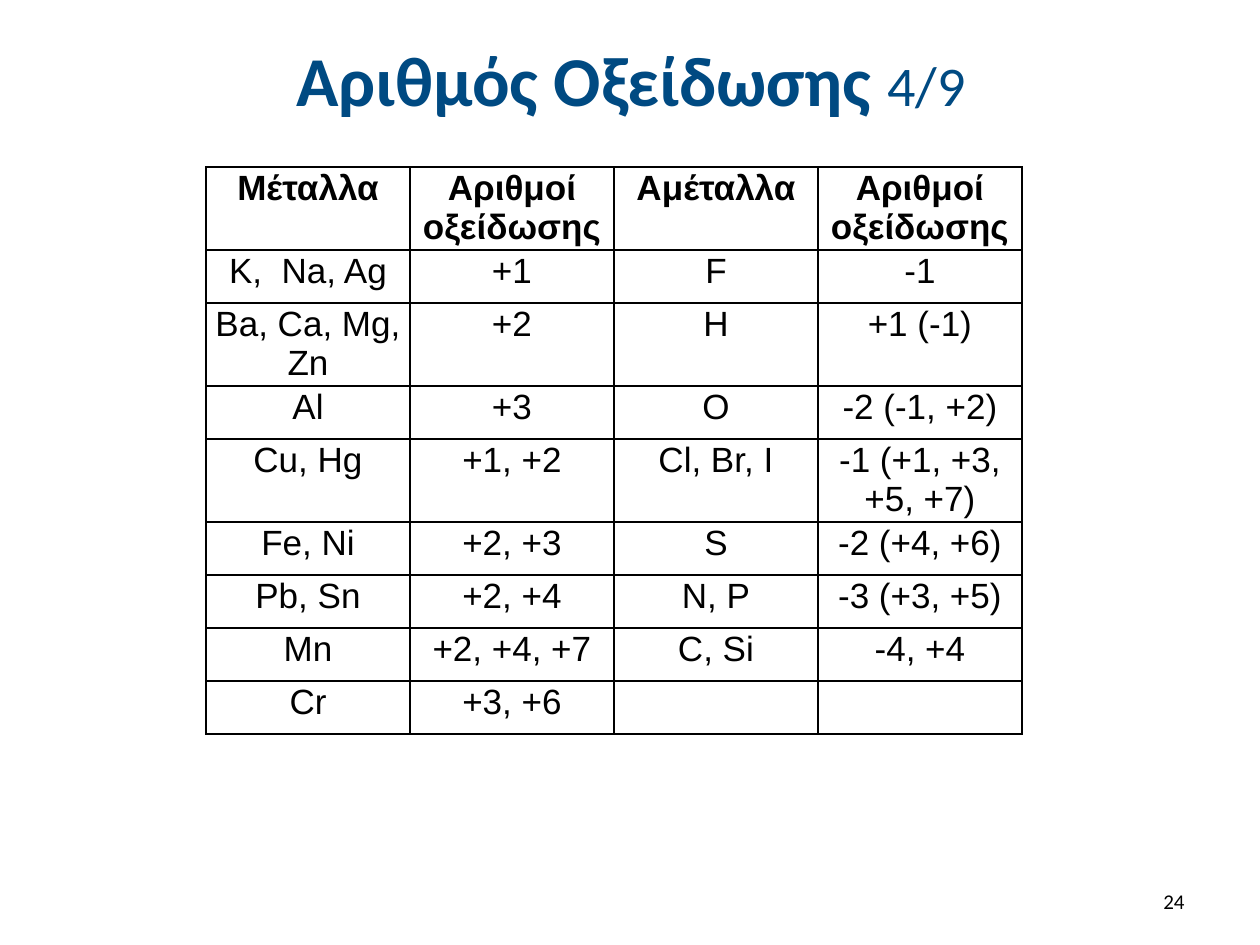
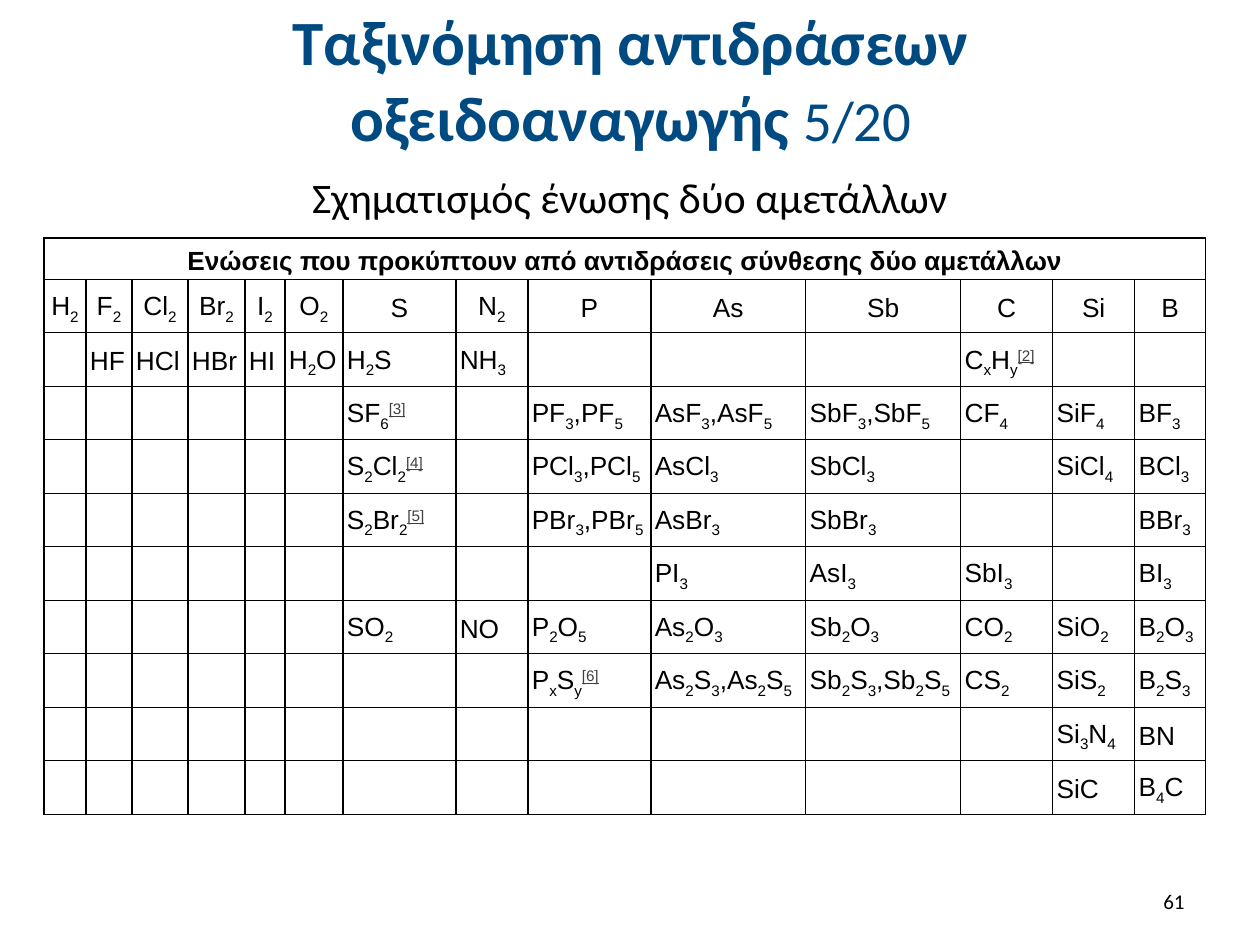
from dataclasses import dataclass
from itertools import groupby

from lxml import etree
from pptx import Presentation
from pptx.dml.color import RGBColor
from pptx.enum.text import MSO_ANCHOR, MSO_AUTO_SIZE, PP_ALIGN
from pptx.oxml.ns import qn
from pptx.util import Emu, Pt

LEFT, CENTER, RIGHT = PP_ALIGN.LEFT, PP_ALIGN.CENTER, PP_ALIGN.RIGHT
TOP, MIDDLE = MSO_ANCHOR.TOP, MSO_ANCHOR.MIDDLE
NO_AUTOFIT = MSO_AUTO_SIZE.NONE
TITLE_ONLY = 5
PX_PER_INCH = 126


@dataclass(frozen=True)
class Theme:
    title_color: str = "004A82"
    text_color: str = "000000"
    note_color: str = "3F3F3F"
    paper: str = "FFFFFF"
    text_font: str = "Calibri"
    table_font: str = "Arial"
    subtitle_size: float = 24
    number_size: float = 12
    numbers_table_size: float = 20
    compounds_table_size: float = 15
    border_width: float = 1
    subscript: int = -25000
    superscript: int = 30000


THEME = Theme()

# Metals and nonmetals with their oxidation numbers
OXIDATION_ROWS = [
    ["Μέταλλα", "Αριθμοί οξείδωσης", "Αμέταλλα", "Αριθμοί οξείδωσης"],
    ["K,  Na, Ag", "+1", "F", "-1"],
    ["Ba, Ca, Mg, Zn", "+2", "H", "+1 (-1)"],
    ["Al", "+3", "O", "-2 (-1, +2)"],
    ["Cu, Hg", "+1, +2", "Cl, Br, I", "-1 (+1, +3, +5, +7)"],
    ["Fe, Ni", "+2, +3", "S", "-2 (+4, +6)"],
    ["Pb, Sn", "+2, +4", "N, P", "-3 (+3, +5)"],
    ["Mn", "+2, +4, +7", "C, Si", "-4, +4"],
    ["Cr", "+3, +6", "", ""],
]
OXIDATION_COLUMNS = [204] * 4
OXIDATION_HEIGHTS = [83, 53, 83, 53, 83, 53, 53, 53, 53]

# Compounds of two nonmetals, one column per element
COMPOUNDS_HEADING = "Ενώσεις που προκύπτουν από αντιδράσεις σύνθεσης δύο αμετάλλων"
COMPOUND_ROWS = [row.split("|") for row in (
    "H2|F2|Cl2|Br2|I2|O2|S|N2|P|As|Sb|C|Si|B",
    "|HF|HCl|HBr|HI|H2O|H2S|NH3||||CxHy[2]||",
    "||||||SF6[3]||PF3,PF5|AsF3,AsF5|SbF3,SbF5|CF4|SiF4|BF3",
    "||||||S2Cl2[4]||PCl3,PCl5|AsCl3|SbCl3||SiCl4|BCl3",
    "||||||S2Br2[5]||PBr3,PBr5|AsBr3|SbBr3|||BBr3",
    "|||||||||PI3|AsI3|SbI3||BI3",
    "||||||SO2|NO|P2O5|As2O3|Sb2O3|CO2|SiO2|B2O3",
    "||||||||PxSy[6]|As2S3,As2S5|Sb2S3,Sb2S5|CS2|SiS2|B2S3",
    "||||||||||||Si3N4|BN",
    "||||||||||||SiC|B4C",
)]
COMPOUND_COLUMNS = [42, 46, 56, 57, 40, 58, 113, 72, 123, 155, 155, 92, 82, 71]
COMPOUND_HEIGHTS = [40] + [53, 54] * 5


def px(length):
    return Emu(round(length * 914400 / PX_PER_INCH))


def set_all(target, values):
    for name, value in values.items():
        setattr(target, name, value)


def add_span(para, text, size, font=THEME.text_font, color=THEME.text_color,
             baseline=0, **style):
    span = para.add_run()
    span.text = text
    set_all(span.font, {"size": Pt(size), "name": font, "bold": False, **style})
    span.font.color.rgb = RGBColor.from_string(color)
    if baseline:
        span.font._element.set("baseline", str(baseline))


def add_formula(para, formula, size):
    """Lower the indices of a formula and raise its note reference."""
    body, bracket, note = formula.partition("[")
    for is_index, letters in groupby(body, lambda letter: letter in "0123456789xy"):
        add_span(para, "".join(letters), size, THEME.table_font,
                 baseline=THEME.subscript if is_index else 0)
    if bracket:
        add_span(para, bracket + note, size, THEME.table_font, THEME.note_color,
                 THEME.superscript, underline=True)


# Titles and text boxes
def place(shape, left, top, width, height):
    set_all(shape, {"left": px(left), "top": px(top),
                    "width": px(width), "height": px(height)})


def prepare_frame(box, align, anchor):
    set_all(box.text_frame, {"word_wrap": True, "auto_size": NO_AUTOFIT,
                             "vertical_anchor": anchor})
    para = box.text_frame.paragraphs[0]
    para.alignment = align
    return para


def add_text(page, text, bounds, size, align, anchor):
    box = page.shapes.add_textbox(0, 0, 0, 0)
    place(box, *bounds)
    add_span(prepare_frame(box, align, anchor), text, size)


def add_page(deck, title, title_size, part, part_size, number):
    page = deck.slides.add_slide(deck.slide_layouts[TITLE_ONLY])
    box = page.shapes.title
    place(box, 64, 16, 1134, 125)
    para = prepare_frame(box, CENTER, MIDDLE)
    add_span(para, title + " ", title_size, color=THEME.title_color, bold=True)
    add_span(para, part, part_size, color=THEME.title_color)
    add_text(page, number, (903, 876, 294, 50), THEME.number_size, RIGHT, MIDDLE)
    return page


# Tables
def add_borders(cell):
    properties = cell._tc.get_or_add_tcPr()
    for index, side in enumerate(("lnL", "lnR", "lnT", "lnB")):
        line = etree.Element(qn(f"a:{side}"), w=str(Pt(THEME.border_width)))
        fill = etree.SubElement(line, qn("a:solidFill"))
        etree.SubElement(fill, qn("a:srgbClr"), val=THEME.text_color)
        properties.insert(index, line)


def add_grid(page, left, top, columns, heights, inset, anchor):
    frame = page.shapes.add_table(len(heights), len(columns), px(left), px(top),
                                  px(sum(columns)), px(sum(heights)))
    table = frame.table
    set_all(table, {"first_row": False, "horz_banding": False})
    for column, width in zip(table.columns, columns):
        column.width = px(width)
    for row, height in zip(table.rows, heights):
        row.height = px(height)
    for cell in table.iter_cells():
        set_all(cell, {f"margin_{side}": px(inset)
                       for side in ("left", "right", "top", "bottom")})
        cell.vertical_anchor = anchor
        cell.fill.solid()
        cell.fill.fore_color.rgb = RGBColor.from_string(THEME.paper)
        add_borders(cell)
    return table


def cell_para(table, row, column, align, spacing=1.0):
    para = table.cell(row, column).text_frame.paragraphs[0]
    set_all(para, {"alignment": align, "line_spacing": spacing})
    return para


def add_oxidation_table(page):
    table = add_grid(page, 206, 167, OXIDATION_COLUMNS, OXIDATION_HEIGHTS, 2, TOP)
    for row, texts in enumerate(OXIDATION_ROWS):
        for column, text in enumerate(texts):
            if text:
                add_span(cell_para(table, row, column, CENTER), text,
                         THEME.numbers_table_size, THEME.table_font, bold=row == 0)


def add_compounds_table(page):
    table = add_grid(page, 44, 238, COMPOUND_COLUMNS, COMPOUND_HEIGHTS, 4, MIDDLE)
    size, spacing = THEME.compounds_table_size, 1.15
    table.cell(0, 0).merge(table.cell(0, len(COMPOUND_COLUMNS) - 1))
    add_span(cell_para(table, 0, 0, CENTER, spacing), COMPOUNDS_HEADING, size,
             THEME.table_font, bold=True)
    for row, formulas in enumerate(COMPOUND_ROWS, start=1):
        align = CENTER if row == 1 else LEFT
        for column, formula in enumerate(formulas):
            if formula:
                add_formula(cell_para(table, row, column, align, spacing), formula, size)


def main():
    deck = Presentation()
    set_all(deck, {"slide_width": px(1260), "slide_height": px(945)})

    # Oxidation numbers
    page = add_page(deck, "Αριθμός Οξείδωσης", 40, "4/9", 32, "24")
    add_oxidation_table(page)

    # Compounds of two nonmetals
    page = add_page(deck, "Ταξινόμηση αντιδράσεων οξειδοαναγωγής", 36,
                    "5/20", 32.4, "61")
    add_text(page, "Σχηματισμός ένωσης δύο αμετάλλων", (63, 165, 1134, 69),
             THEME.subtitle_size, CENTER, TOP)
    add_compounds_table(page)

    deck.save("out.pptx")


if __name__ == "__main__":
    main()
